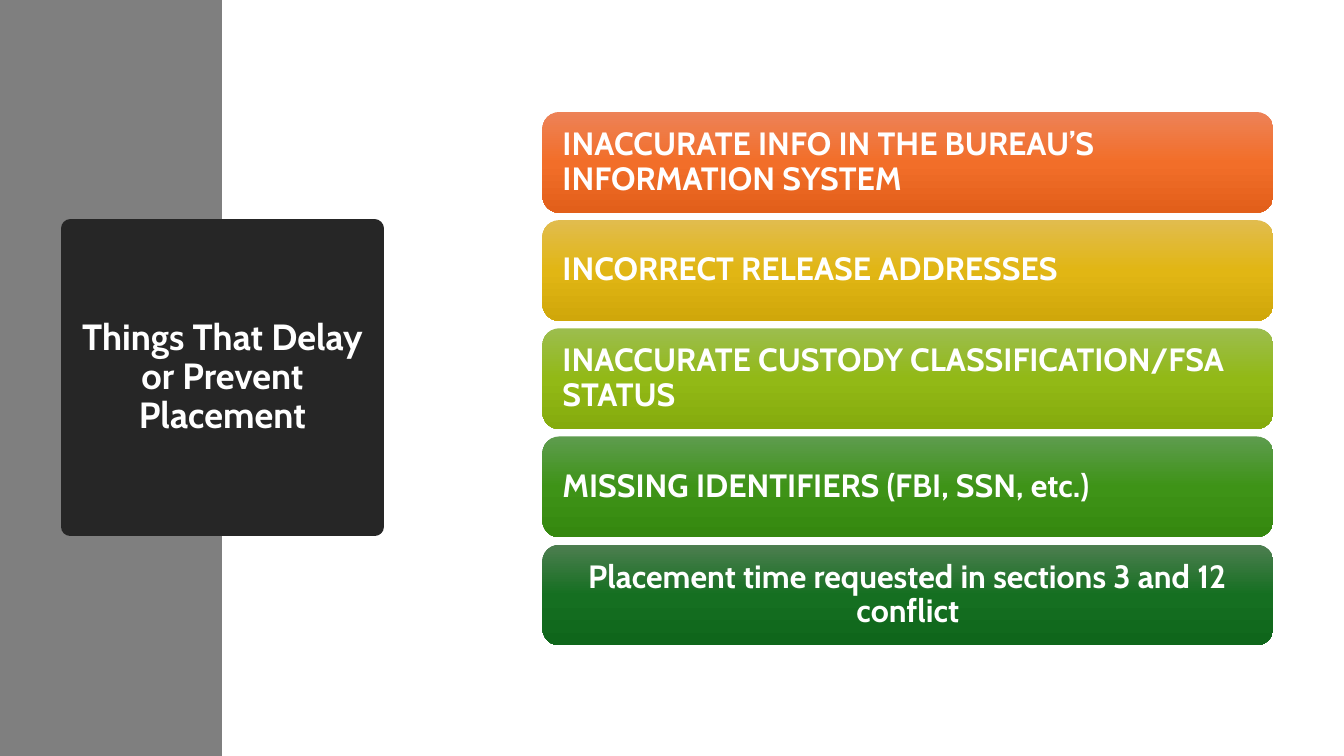
from copy import deepcopy

from pptx import Presentation
from pptx.dml.color import RGBColor
from pptx.enum.shapes import MSO_SHAPE as Shape
from pptx.enum.text import MSO_ANCHOR as Anchor, PP_ALIGN as Align
from pptx.oxml.ns import qn
from pptx.oxml.xmlchemy import OxmlElement
from pptx.util import Pt

WHITE = RGBColor(0xFF, 0xFF, 0xFF)
GRAY = RGBColor(0x7F, 0x7F, 0x7F)
CHARCOAL = RGBColor(0x26, 0x26, 0x26)
ORANGE = (RGBColor(0xED, 0x82, 0x57), RGBColor(0xF2, 0x6E, 0x29), RGBColor(0xE2, 0x5F, 0x1A))
GOLD = (RGBColor(0xE1, 0xBC, 0x4E), RGBColor(0xE1, 0xB6, 0x14), RGBColor(0xD0, 0xA7, 0x0A))
LIME = (RGBColor(0x9C, 0xBD, 0x4E), RGBColor(0x92, 0xB9, 0x16), RGBColor(0x85, 0xAB, 0x0D))
GREEN = (RGBColor(0x5E, 0x9C, 0x4E), RGBColor(0x3E, 0x93, 0x17), RGBColor(0x35, 0x88, 0x0F))
FOREST = (RGBColor(0x4D, 0x7E, 0x50), RGBColor(0x15, 0x6F, 0x21), RGBColor(0x0F, 0x66, 0x1B))

BAR_LEFT, BAR_TOP, BAR_WIDTH, BAR_HEIGHT = 387.5, 80, 522, 72
BAR_STEP = 77.25
BARS = [
    ("INACCURATE INFO IN THE BUREAU’S INFORMATION SYSTEM", ORANGE, Align.LEFT),
    ("INCORRECT RELEASE ADDRESSES", GOLD, Align.LEFT),
    ("INACCURATE CUSTODY CLASSIFICATION/FSA STATUS", LIME, Align.LEFT),
    ("MISSING IDENTIFIERS (FBI, SSN, etc.)", GREEN, Align.LEFT),
    ("Placement time requested in sections 3 and 12 conflict", FOREST, Align.CENTER),
]


class SlideBuilder:
    font_name = "Cabin"
    line_spacing = 0.9

    def __init__(self, slide):
        self.slide = slide

    def block(self, kind, left, top, width, height):
        shape = self.slide.shapes.add_shape(kind, Pt(left), Pt(top), Pt(width), Pt(height))
        shape.shadow.inherit = False
        shape.line.fill.background()
        return shape

    def panel(self, left, top, width, height, color):
        shape = self.block(Shape.RECTANGLE, left, top, width, height)
        shape.fill.solid()
        shape.fill.fore_color.rgb = color
        return shape

    def text(self, shape, words, size, align, inset):
        frame = shape.text_frame
        frame.word_wrap = True
        frame.vertical_anchor = Anchor.MIDDLE
        frame.margin_left = frame.margin_right = Pt(inset)
        paragraph = frame.paragraphs[0]
        paragraph.text = words
        paragraph.alignment = align
        paragraph.line_spacing = self.line_spacing
        font = paragraph.font
        font.name, font.size, font.bold = self.font_name, Pt(size), True
        font.color.rgb = WHITE

    def title(self, left, top, width, height, words):
        shape = self.panel(left, top, width, height, CHARCOAL)
        shape.line.color.rgb = CHARCOAL
        shape.line.width = Pt(13.75)
        # Round joins soften the corners of the thick border
        shape.line._get_or_add_ln().append(OxmlElement("a:round"))
        self.text(shape, words, 26, Align.CENTER, 7.2)

    def bar(self, left, top, width, height, words, colors, align):
        shape = self.block(Shape.ROUNDED_RECTANGLE, left, top, width, height)
        shape.fill.gradient()
        shape.fill.gradient_angle = 270
        # The default gradient has two stops; add the third
        stop_list = shape._element.spPr.find(".//" + qn("a:gsLst"))
        stop_list.append(deepcopy(stop_list[0]))
        for stop, position, color in zip(shape.fill.gradient_stops, (0, 0.5, 1), colors):
            stop.position = position
            stop.color.rgb = color
        self.text(shape, words, 23, align, 10.8)


def main():
    presentation = Presentation()
    presentation.slide_width, presentation.slide_height = Pt(960), Pt(540)
    builder = SlideBuilder(presentation.slides.add_slide(presentation.slide_layouts[6]))

    # Side band and title
    builder.panel(0, 0, 158.5, 540, GRAY)
    builder.title(50.4, 163.4, 217, 213, "Things That Delay or\u00a0Prevent Placement".replace("\u00a0", " "))

    # Stack of causes
    for index, (words, colors, align) in enumerate(BARS):
        top = BAR_TOP + index * BAR_STEP
        builder.bar(BAR_LEFT, top, BAR_WIDTH, BAR_HEIGHT, words, colors, align)

    presentation.save("out.pptx")


if __name__ == "__main__":
    main()
